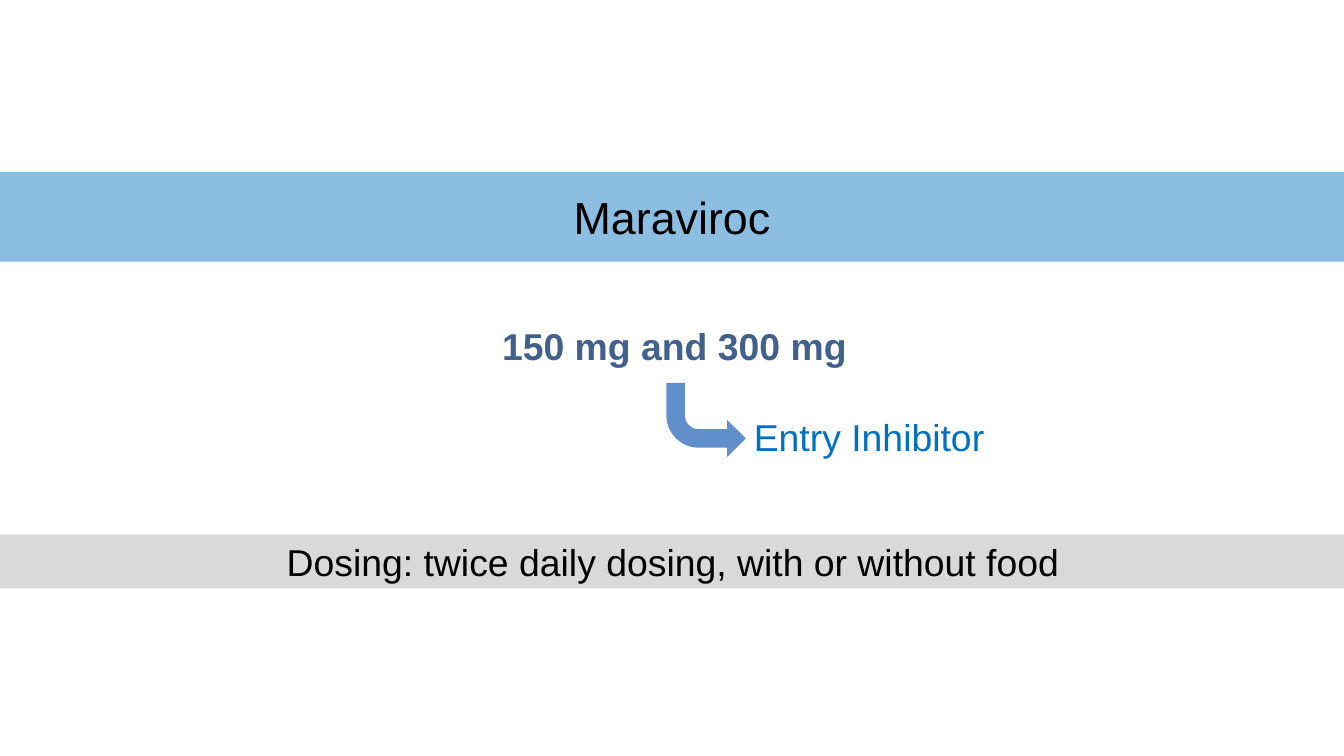
from typing import NamedTuple

from lxml import etree
from pptx import Presentation
from pptx.dml.color import RGBColor
from pptx.enum.shapes import MSO_SHAPE
from pptx.enum.text import MSO_ANCHOR, MSO_AUTO_SIZE, PP_ALIGN
from pptx.oxml.ns import qn
from pptx.util import Pt

RECT = MSO_SHAPE.RECTANGLE
ROUNDED = MSO_SHAPE.ROUNDED_RECTANGLE
BENT_ARROW = MSO_SHAPE.BENT_ARROW
MIDDLE = MSO_ANCHOR.MIDDLE
NO_AUTOFIT = MSO_AUTO_SIZE.NONE
LEFT, CENTER = PP_ALIGN.LEFT, PP_ALIGN.CENTER

FONT = "Arial"
TITLE_ONLY = 5
COLORS = {
    "panel": "FFFFFF",
    "title_band": "0070C0",
    "dosing_band": "D9D9D9",
    "arrow": "618FCC",
    "strength": "41618C",
    "drug_class": "0070C0",
    "text": "000000",
}


class Box(NamedTuple):
    left: float
    top: float
    width: float
    height: float


PANEL = Box(0, 92.9, 720, 221)
TITLE_BAND = Box(-3.6, 92.2, 727.2, 48)
STRENGTH = Box(241.2, 167.8, 240.5, 34.6)
ARROW = Box(357, 205.2, 42.5, 39.6)
DRUG_CLASS = Box(395.3, 218.9, 167.8, 30.2)
DOSING_BAND = Box(0, 286.4, 721.4, 28.8)


def color(name: str) -> RGBColor:
    return RGBColor.from_string(COLORS[name])


def paint(shape, fill: str, opacity: int = 100) -> None:
    shape.fill.solid()
    shape.fill.fore_color.rgb = color(fill)
    if opacity < 100:
        srgb = shape.fill._xPr.find(qn("a:solidFill")).find(qn("a:srgbClr"))
        etree.SubElement(srgb, qn("a:alpha"), val=str(opacity * 1000))


def place(shape, box: Box) -> None:
    shape.left, shape.top, shape.width, shape.height = map(Pt, box)


def add_block(slide, kind, box: Box, fill: str | None = None):
    block = slide.shapes.add_shape(kind, *map(Pt, box))
    block.shadow.inherit = False
    block.line.fill.background()
    if fill:
        paint(block, fill)
    else:
        block.fill.background()
    return block


def write(shape, text: str, *, ink: str = "text", size: float = 20,
          bold: bool = False, align=CENTER, leading: float | None = None) -> None:
    frame = shape.text_frame
    frame.word_wrap = True
    frame.auto_size = NO_AUTOFIT
    frame.vertical_anchor = MIDDLE
    paragraph = frame.paragraphs[0]
    paragraph.alignment = align
    paragraph.space_before = Pt(0)
    if leading:
        paragraph.line_spacing = Pt(leading)
    run = paragraph.add_run()
    run.text = text
    run.font.name = FONT
    run.font.size = Pt(size)
    run.font.bold = bold
    run.font.color.rgb = color(ink)


def main() -> None:
    deck = Presentation()
    deck.slide_width, deck.slide_height = Pt(720), Pt(405)
    slide = deck.slides.add_slide(deck.slide_layouts[TITLE_ONLY])

    panel = add_block(slide, RECT, PANEL, "panel")
    panel.line.color.rgb = color("panel")
    panel.line.width = Pt(2)

    drug_class = add_block(slide, ROUNDED, DRUG_CLASS)
    write(drug_class, "Entry Inhibitor", ink="drug_class", align=LEFT)

    arrow = add_block(slide, BENT_ARROW, ARROW, "arrow")
    arrow._element.spPr.xfrm.set("flipV", "1")

    strength = add_block(slide, ROUNDED, STRENGTH)
    write(strength, "150 mg and 300 mg", ink="strength", bold=True)

    title = slide.shapes.title
    slide.shapes._spTree.append(title._element)
    place(title, TITLE_BAND)
    paint(title, "title_band", opacity=45)
    write(title, "Maraviroc", size=24, leading=28)

    dosing = add_block(slide, RECT, DOSING_BAND, "dosing_band")
    write(dosing, "Dosing: twice daily dosing, with or without food", leading=24)

    deck.save("out.pptx")


if __name__ == "__main__":
    main()
